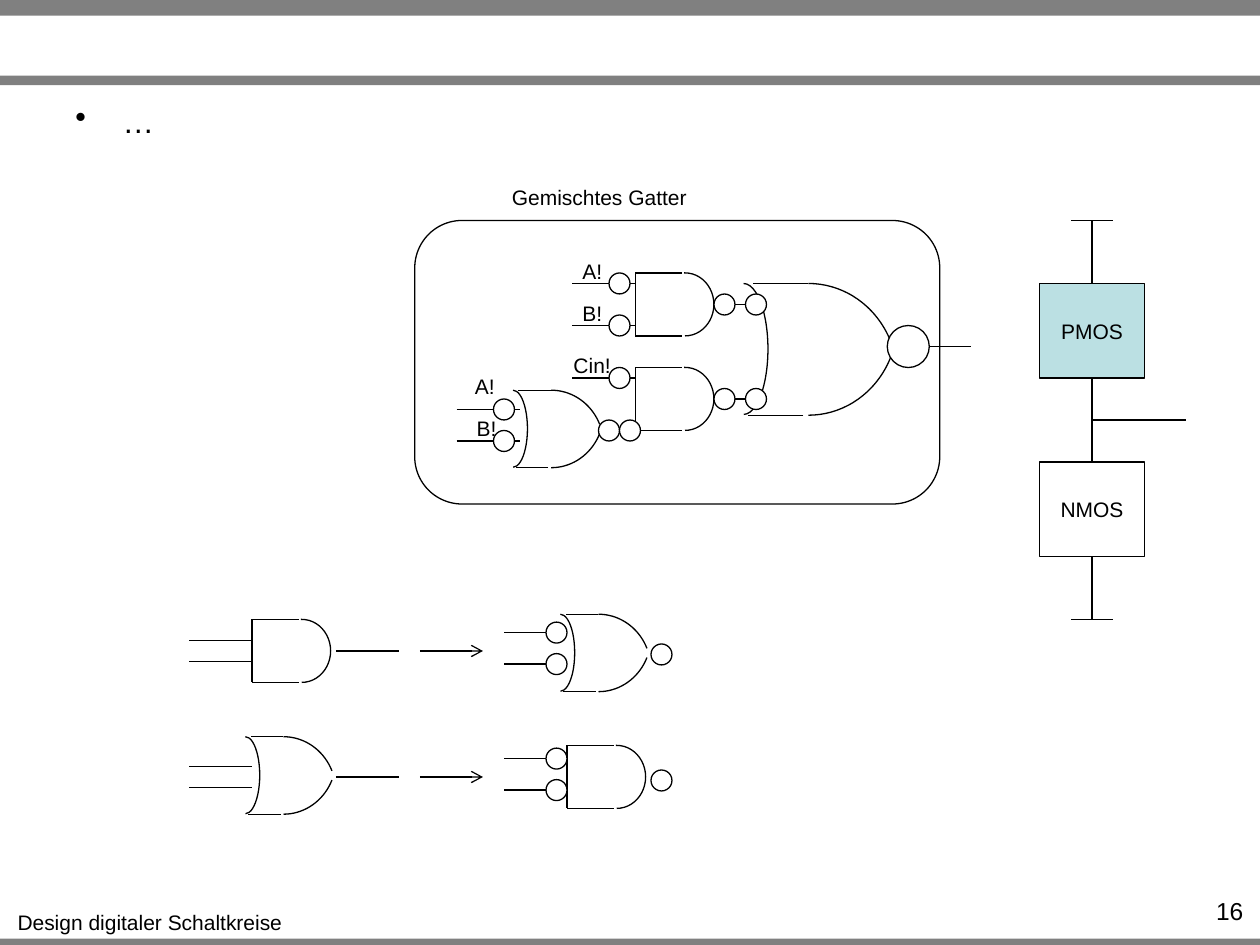
from lxml import etree
from pptx import Presentation
from pptx.dml.color import RGBColor
from pptx.enum.shapes import MSO_CONNECTOR, MSO_SHAPE
from pptx.enum.text import MSO_ANCHOR, PP_ALIGN
from pptx.oxml.ns import qn
from pptx.util import Pt

RECT, ROUND, OVAL, ARC = (MSO_SHAPE.RECTANGLE, MSO_SHAPE.ROUNDED_RECTANGLE,
                          MSO_SHAPE.OVAL, MSO_SHAPE.ARC)
STRAIGHT = MSO_CONNECTOR.STRAIGHT
LEFT, CENTER, RIGHT = PP_ALIGN.LEFT, PP_ALIGN.CENTER, PP_ALIGN.RIGHT
MIDDLE = MSO_ANCHOR.MIDDLE


def color(code):
    return RGBColor.from_string(code)


class Sketch:
    font, ink, paper, bar, tint = "Arial", "000000", "FFFFFF", "808080", "BBE0E3"
    weight = 0.75

    def __init__(self, slide):
        self.slide = slide

    def label(self, frame, text, size=12, align=CENTER):
        frame.text = text
        para = frame.paragraphs[0]
        para.alignment = align
        font = para.runs[0].font
        font.name, font.size = self.font, Pt(size)
        font.color.rgb = color(self.ink)
        return para

    def text(self, x, y, w, h, text, size=12, align=CENTER, wrap=False):
        box = self.slide.shapes.add_textbox(Pt(x), Pt(y), Pt(w), Pt(h))
        box.text_frame.word_wrap = wrap
        return self.label(box.text_frame, text, size, align)

    def bullet(self, x, y, w, h, text):
        para = self.text(x, y, w, h, text, 18, LEFT, True)
        props = para._p.get_or_add_pPr()
        props.set("marL", str(Pt(27)))
        props.set("indent", str(-Pt(27)))
        etree.SubElement(props, qn("a:buChar")).set("char", "•")

    def shape(self, kind, x, y, w, h, fill=None, edge=True):
        item = self.slide.shapes.add_shape(kind, Pt(x), Pt(y), Pt(w), Pt(h))
        item.shadow.inherit = False
        if fill:
            item.fill.solid()
            item.fill.fore_color.rgb = color(fill)
        else:
            item.fill.background()
        if edge:
            item.line.color.rgb = color(self.ink)
            item.line.width = Pt(self.weight)
        else:
            item.line.fill.background()
        return item

    def block(self, x, y, w, h, text, fill=None):
        frame = self.shape(RECT, x, y, w, h, fill).text_frame
        frame.vertical_anchor = MIDDLE
        self.label(frame, text)

    def wire(self, x1, y1, x2, y2, arrow=False):
        item = self.slide.shapes.add_connector(STRAIGHT, Pt(x1), Pt(y1), Pt(x2), Pt(y2))
        item.line.color.rgb = color(self.ink)
        item.line.width = Pt(self.weight)
        if arrow:
            end = etree.SubElement(item.line._get_or_add_ln(), qn("a:tailEnd"))
            end.set("type", "arrow")
        etree.SubElement(item._element.spPr, qn("a:effectLst"))

    def arc(self, x, y, w, h, end, flip=False):
        """Draw an arc from the top; end is in units of 100000/60000 degree."""
        item = self.shape(ARC, x, y, w, h)
        item.adjustments[0], item.adjustments[1] = 162, end
        if flip:
            item._element.spPr.get_or_add_xfrm().set("flipV", "1")

    def bubble(self, x, y, d=12):
        self.shape(OVAL, x, y, d, d, self.paper)

    def and_gate(self, x, y):
        for level in (y, y + 36):
            self.wire(x, level, x + 27, level)
        self.arc(x + 12, y, 33, 36, 54.9, True)
        self.wire(x, y, x, y + 36)

    def or_gate(self, x, y, scale=1):
        w, h, base = 60 * scale, 63.5 * scale, y + 44.3 * scale
        self.arc(x, y, 16.4 * scale, 44 * scale, 53.88)
        self.arc(x, y, w, h, 201.69)
        self.wire(x + 29.7 * scale, y, x + 11.3 * scale, y)
        self.wire(x + 28.3 * scale, base, x + 9.7 * scale, base)
        self.arc(x, base - h, w, h, 201.69, True)


def frame(art):
    for y, h in ((536.4, 5.4), (0, 9), (43.2, 5.4)):
        art.shape(RECT, 0, y, 720, h, art.bar, False)
    art.text(2.2, 516.2, 167, 21.6, "Design digitaler Schaltkreise")
    art.bullet(36, 54.7, 648, 53.3, "…")
    art.text(655, 508.3, 62.6, 17.3, "16", 14, RIGHT, True)


def mixed(art):
    art.and_gate(363, 156)
    art.and_gate(363, 210)
    art.or_gate(411, 162, 1.7)
    art.or_gate(285, 223)
    for y in (174, 228):
        art.wire(411, y, 435, y)
    inputs = ((327, 162), (327, 186), (327, 216), (261, 234), (261, 252))
    for x, y in inputs:
        art.wire(x, y, x + 36, y)
    art.wire(345, 246, 363, 246)
    art.wire(531, 198, 555, 198)
    for x, y, w, name in ((325.5, 144, 26, "A!"), (325.5, 168, 26, "B!"),
                          (320.4, 198, 36, "Cin!"), (264, 210, 26, "A!"),
                          (265, 234, 26, "B!")):
        art.text(x, y, w, 21.6, name)
    art.shape(ROUND, 237, 126, 300, 162)
    art.text(285, 102, 115, 21.6, "Gemischtes Gatter")
    for x, y in inputs:
        art.bubble(x + 21, y - 6)
    for x, y in ((408, 168), (426, 168), (408, 222), (426, 222), (342, 240), (354, 240)):
        art.bubble(x, y)
    art.bubble(507, 186, 24)


def stack(art):
    art.block(594, 162, 60, 54, "PMOS", art.tint)
    art.block(594, 264, 60, 54, "NMOS")
    for top, base in ((126, 162), (216, 264), (318, 354)):
        art.wire(624, top, 624, base)
    for y in (126, 354):
        art.wire(636, y, 612, y)
    art.wire(624, 240, 678, 240)


def laws(art):
    art.and_gate(144, 354)
    art.or_gate(312, 351)
    art.or_gate(132, 421)
    art.and_gate(324, 426)
    for mid in (372, 444):
        for y in (mid - 6, mid + 6):
            art.wire(108, y, 144, y)
        art.wire(192, mid, 228, mid)
        art.wire(240, mid, 276, mid, True)
        for y in (mid - 10.5, mid + 7.5):
            art.wire(288, y, 324, y)
            art.bubble(312, y - 6)
        art.bubble(372, mid - 4)


def main():
    deck = Presentation()
    deck.slide_width, deck.slide_height = Pt(720), Pt(540)
    art = Sketch(deck.slides.add_slide(deck.slide_layouts[6]))
    for part in (frame, mixed, stack, laws):
        part(art)
    deck.save("out.pptx")


if __name__ == "__main__":
    main()
